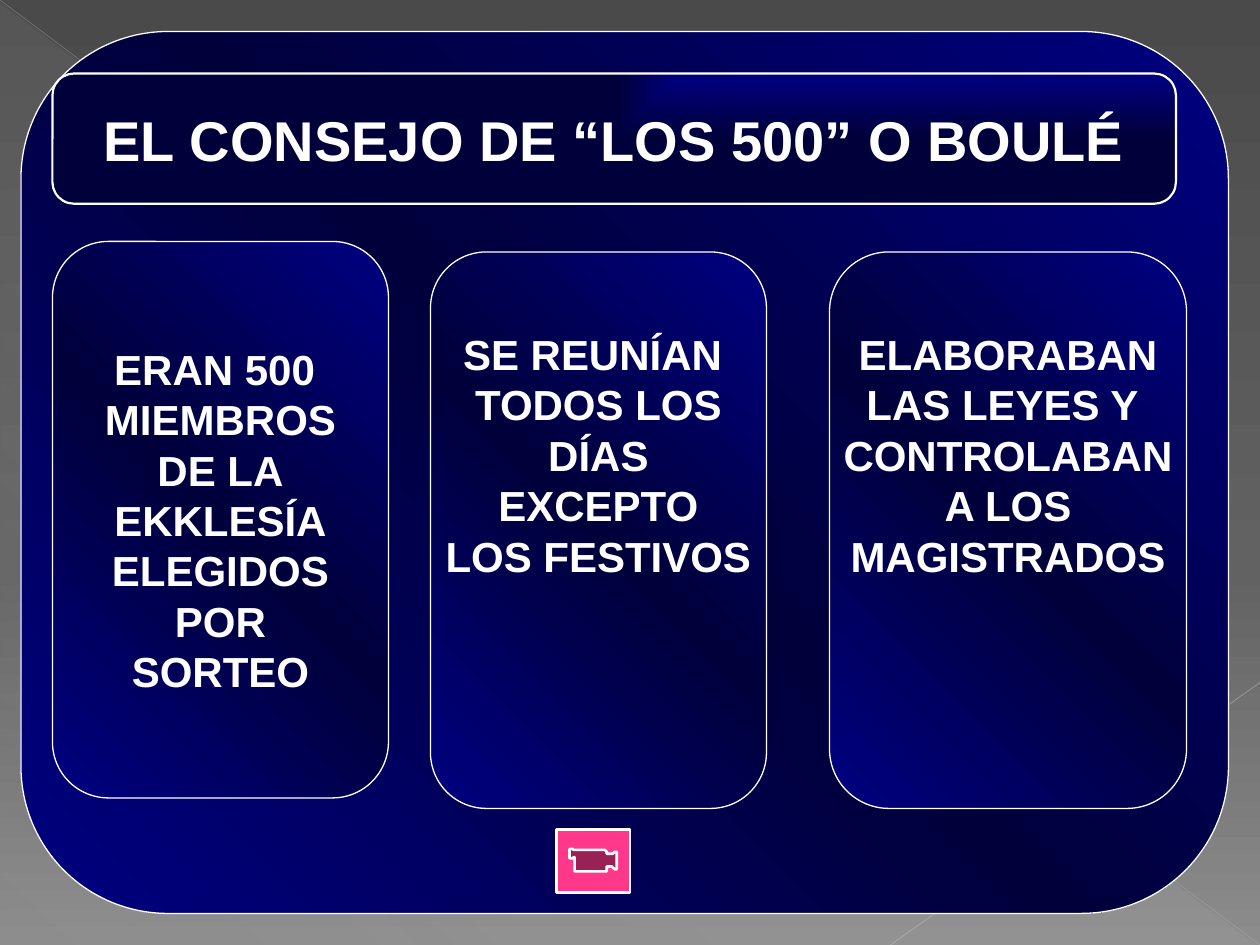
from lxml import etree
from pptx import Presentation
from pptx import util as u
from pptx.dml.color import RGBColor
from pptx.enum import shapes, text
from pptx.oxml.ns import qn

WHITE = RGBColor(0xFF, 0xFF, 0xFF)
NAVY = RGBColor(0x00, 0x00, 0x80)
MIDNIGHT = RGBColor(0x00, 0x00, 0x3B)
PINK = RGBColor(0xFF, 0x38, 0x8C)
CHARCOAL = RGBColor(0x4A, 0x4A, 0x4A)
GRAPHITE = RGBColor(0x62, 0x62, 0x62)
ASH = RGBColor(0x8C, 0x8C, 0x8C)
MIST = RGBColor(0xD2, 0xD2, 0xD2)
SILVER = RGBColor(0xBF, 0xBF, 0xBF)
PEARL = RGBColor(0xC6, 0xC6, 0xC6)

SHEEN = [(0, NAVY, 100), (50, MIDNIGHT, 100), (100, NAVY, 100)]
CORNER_GLOW = [(0, NAVY, 100), (100, MIDNIGHT, 100)]
BACKDROP = [(0, CHARCOAL, 100), (60, GRAPHITE, 100), (100, ASH, 100)]
VEIL = [(0, MIST, 10), (70, MIST, 8), (100, MIST, 1)]

COLUMNS = [
    ((5, 23, 32, 53), 0.05,
     ["ERAN 500 ", "MIEMBROS", "DE LA", "EKKLESÍA", "ELEGIDOS", "POR", "SORTEO"]),
    ((41, 24, 32, 53), 1.25,
     ["SE REUNÍAN ", "TODOS LOS", "DÍAS", "EXCEPTO", "LOS FESTIVOS"]),
    ((79, 24, 34, 53), 1.25,
     ["ELABORABAN", "LAS LEYES Y ", "CONTROLABAN", "A LOS", "MAGISTRADOS"]),
]


class Deck:
    """Style and current slide, measured on a grid of 120 columns by 90 rows."""

    font = {"name": "Arial", "bold": True}

    def __init__(self):
        self.presentation = Presentation()
        self.presentation.slide_width = u.Inches(10)
        self.presentation.slide_height = u.Inches(7.5)
        self.cell = self.presentation.slide_width / 120
        self.slide = self.presentation.slides.add_slide(self.presentation.slide_layouts[6])

    def grid(self, values):
        return [round(value * self.cell) for value in values]

    def gradient(self, owner, fill, stops, angle=None):
        fill.gradient()
        gradient = owner.element.find(".//" + qn("a:gradFill"))
        gradient.clear()
        gradient.set("rotWithShape", "1")
        stop_list = etree.SubElement(gradient, qn("a:gsLst"))
        for position, color, opacity in stops:
            stop = etree.SubElement(stop_list, qn("a:gs"), pos=str(position * 1000))
            tint = etree.SubElement(stop, qn("a:srgbClr"), val=str(color))
            if opacity < 100:
                etree.SubElement(tint, qn("a:alpha"), val=str(opacity * 1000))
        if angle is None:
            focus = etree.SubElement(gradient, qn("a:path"), {"path": "rect"})
            etree.SubElement(focus, qn("a:fillToRect"), l="100000", b="100000")
        else:
            etree.SubElement(gradient, qn("a:lin"), ang=str(angle * 60000), scaled="0")

    def background(self, stops, angle):
        self.gradient(self.slide, self.slide.background.fill, stops, angle)

    def shape(self, kind, box, line_width=None):
        shape = self.slide.shapes.add_shape(kind, *self.grid(box))
        shape.shadow.inherit = False
        if line_width is None:
            shape.line.fill.background()
        else:
            shape.line.color.rgb = WHITE
            shape.line.width = u.Pt(line_width)
        return shape

    def veil(self, box, stops, angle):
        shape = self.shape(shapes.MSO_SHAPE.RIGHT_TRIANGLE, box)
        self.gradient(shape, shape.fill, stops, angle)

    def line(self, ends, color, width, opacity):
        connector = self.slide.shapes.add_connector(
            shapes.MSO_CONNECTOR.STRAIGHT, *self.grid(ends))
        connector.line.color.rgb = color
        connector.line.width = u.Pt(width)
        tint = connector.element.spPr.find(".//" + qn("a:srgbClr"))
        etree.SubElement(tint, qn("a:alpha"), val=str(opacity * 1000))
        etree.SubElement(connector.element.spPr, qn("a:effectLst"))

    def panel(self, box, stops=SHEEN, angle=315, line_width=0.75):
        shape = self.shape(shapes.MSO_SHAPE.ROUNDED_RECTANGLE, box, line_width)
        self.gradient(shape, shape.fill, stops, angle)
        return shape

    def label(self, shape, lines, size, wrap=False, bottom=0.05):
        frame = shape.text_frame
        frame_format = {"word_wrap": wrap, "margin_bottom": u.Inches(bottom),
                        "vertical_anchor": text.MSO_ANCHOR.MIDDLE}
        for name, value in frame_format.items():
            setattr(frame, name, value)
        frame.text = "\n".join(lines)
        for paragraph in frame.paragraphs:
            paragraph.alignment = text.PP_ALIGN.CENTER
            font = paragraph.runs[0].font
            for name, value in {**self.font, "size": u.Pt(size)}.items():
                setattr(font, name, value)
            font.color.rgb = WHITE

    def movie_button(self, box):
        shape = self.shape(shapes.MSO_SHAPE.ACTION_BUTTON_MOVIE, box, 1.5)
        shape.fill.solid()
        shape.fill.fore_color.rgb = PINK


def main():
    deck = Deck()
    deck.background(BACKDROP, 90)
    deck.veil((0, 0.2, 119.8, 89.8), VEIL, 133)
    deck.line((0, 0, 120, 90), SILVER, 0.39, 35)
    deck.line((120, 65, 84.8, 90), PEARL, 0.47, 45)
    deck.panel((2, 3, 115, 84))
    title = deck.panel((5, 7, 107, 12.4), CORNER_GLOW, None, 1.25)
    deck.label(title, ["EL CONSEJO DE “LOS 500” O BOULÉ"], 32, wrap=True)
    for box, bottom, lines in COLUMNS:
        deck.label(deck.panel(box), lines, 24, bottom=bottom)
    deck.movie_button((53, 79, 7, 6))
    deck.presentation.save("out.pptx")


if __name__ == "__main__":
    main()
